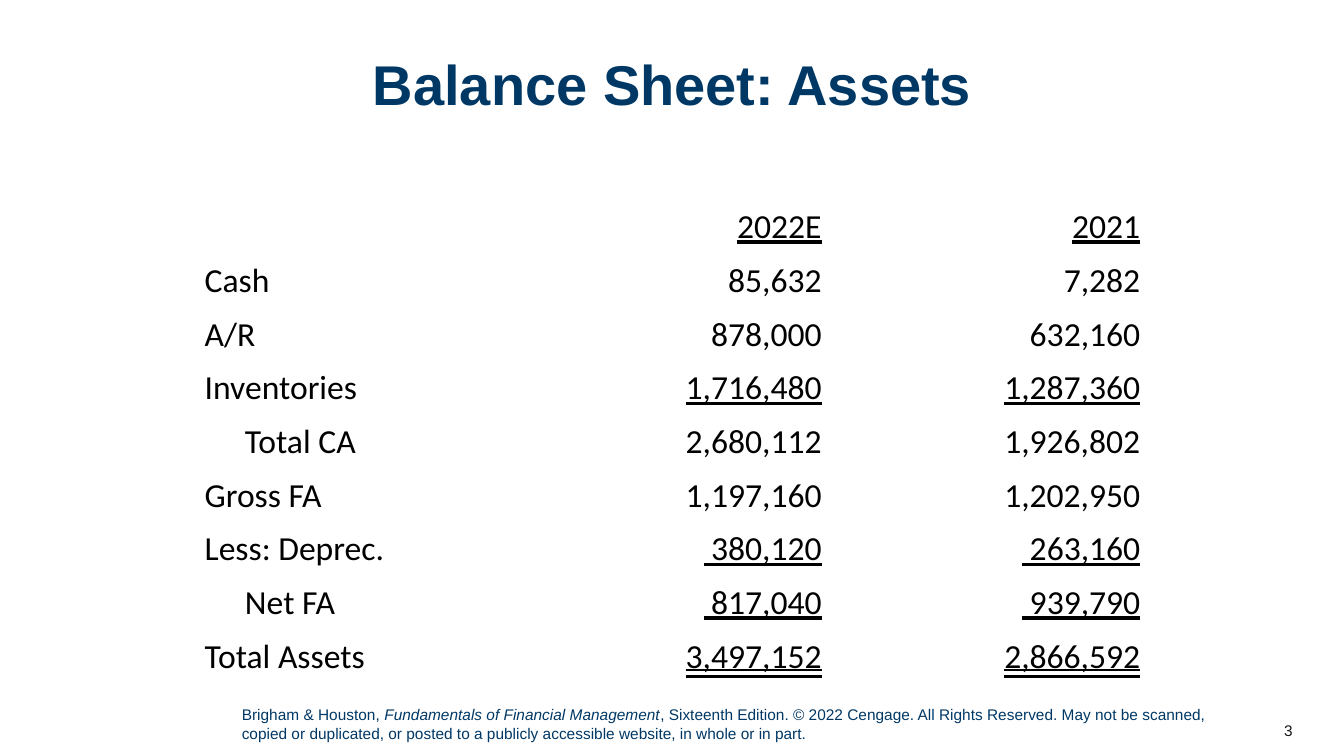
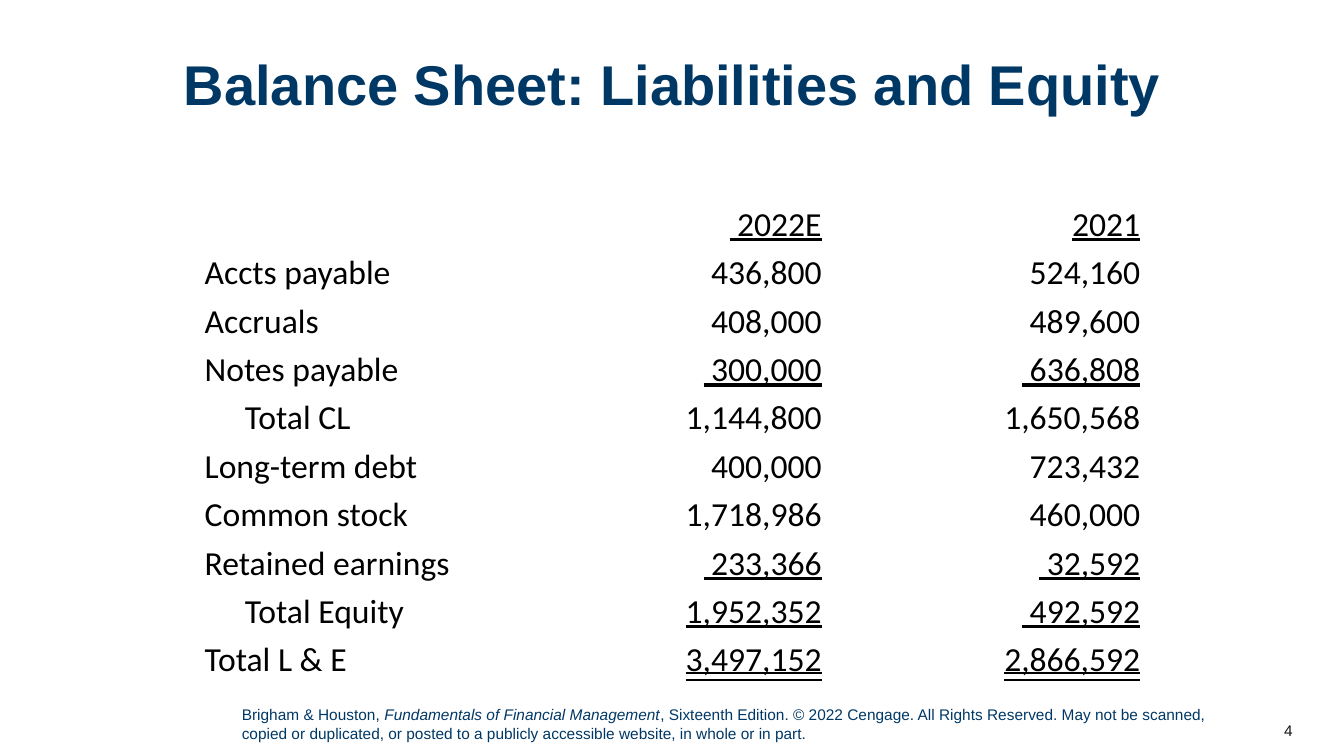
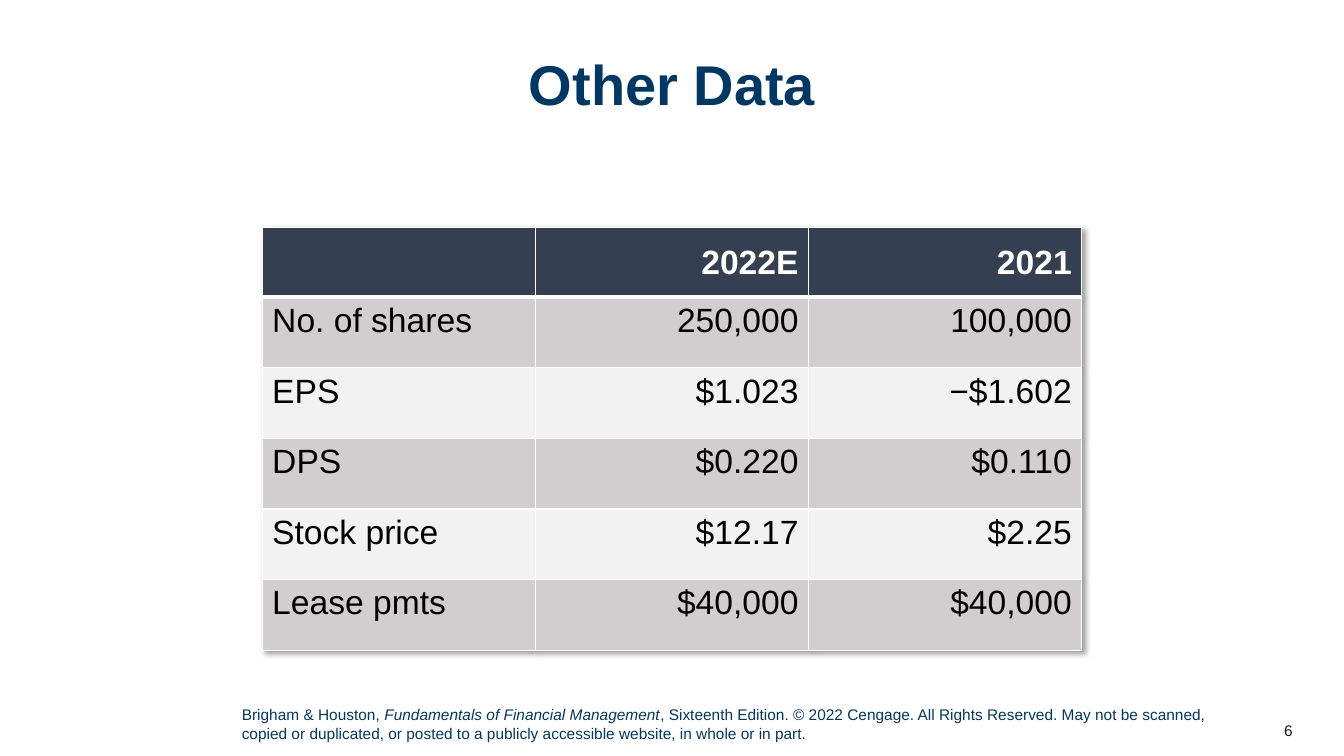
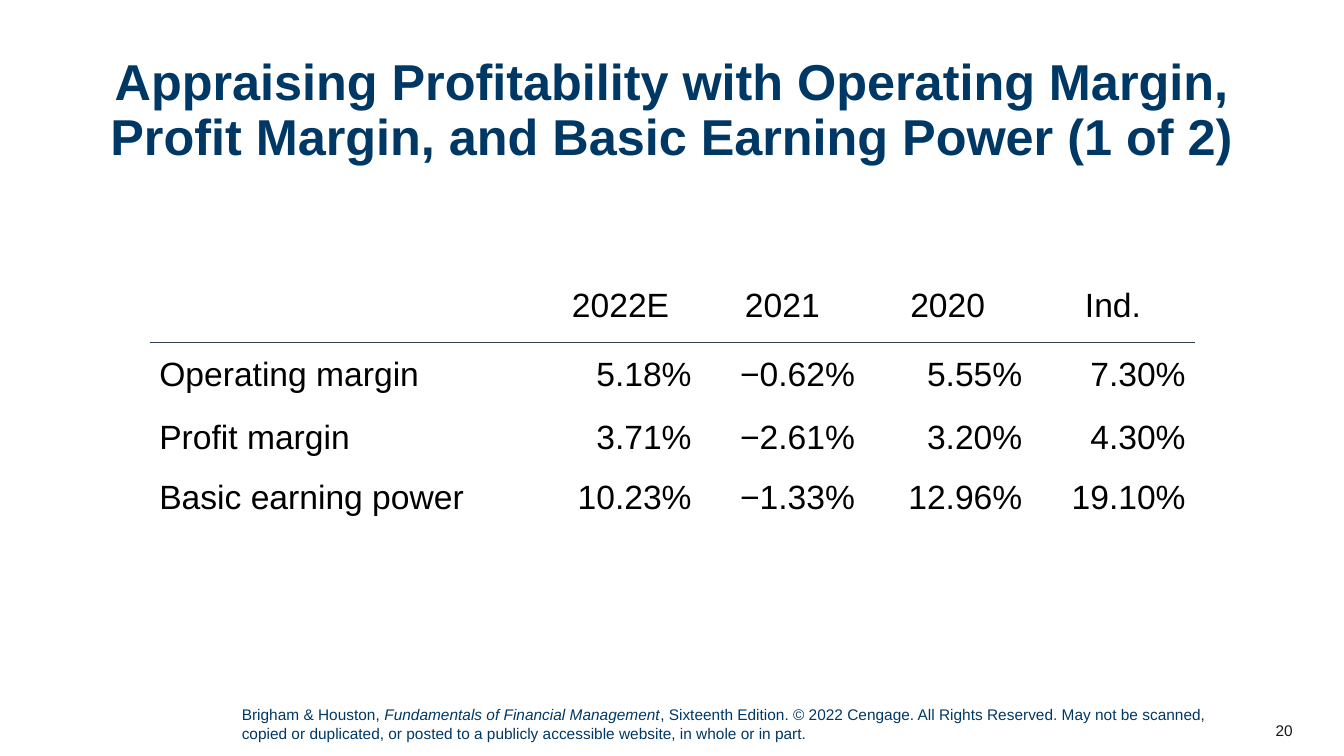
from lxml import etree
from pptx import Presentation
from pptx.dml.color import RGBColor
from pptx.enum.text import MSO_ANCHOR, MSO_UNDERLINE, PP_ALIGN
from pptx.oxml import parse_xml
from pptx.oxml.ns import qn
from pptx.util import Inches, Pt

LEFT, CENTER, RIGHT = PP_ALIGN.LEFT, PP_ALIGN.CENTER, PP_ALIGN.RIGHT
TOP, MIDDLE = MSO_ANCHOR.TOP, MSO_ANCHOR.MIDDLE
SINGLE, DOUBLE = MSO_UNDERLINE.SINGLE_LINE, MSO_UNDERLINE.DOUBLE_LINE

NAVY = RGBColor(0x00, 0x38, 0x65)
SLATE = RGBColor(0x34, 0x3F, 0x52)
INK = RGBColor(0x18, 0x17, 0x17)
BLACK = RGBColor(0x00, 0x00, 0x00)
WHITE = RGBColor(0xFF, 0xFF, 0xFF)
BAND_DARK = RGBColor(0xD0, 0xCE, 0xCE)
BAND_LIGHT = RGBColor(0xF2, 0xF2, 0xF2)

PLAIN_TABLE_STYLE = "{2D5ABB26-0587-4C30-8999-92F81FD0307C}"
TABLE_SHADOW = (
    '<a:effectLst xmlns:a="http://schemas.openxmlformats.org/drawingml/2006/main">'
    '<a:outerShdw blurRad="50800" dist="38100" dir="2700000" algn="tl" rotWithShape="0">'
    '<a:prstClr val="black"><a:alpha val="40000"/></a:prstClr>'
    "</a:outerShdw></a:effectLst>"
)

# Each citation part: text, italic
CITATION = [
    ("Brigham & Houston, ", False),
    ("Fundamentals of Financial Management", True),
    (", Sixteenth Edition. © 2022 Cengage. All Rights Reserved. May not be scanned, "
     "copied or duplicated, or posted to a publicly accessible website, in whole or in part.", False),
]

# Each statement row: underline, indented label, cells
ASSETS = [
    (SINGLE, False, ("", "2022E", "2021")),
    (None, False, ("Cash", "85,632", "7,282")),
    (None, False, ("A/R", "878,000", "632,160")),
    (SINGLE, False, ("Inventories", "1,716,480", "1,287,360")),
    (None, True, ("Total CA", "2,680,112", "1,926,802")),
    (None, False, ("Gross FA", "1,197,160", "1,202,950")),
    (SINGLE, False, ("Less: Deprec.", " 380,120", " 263,160")),
    (SINGLE, True, ("Net FA", " 817,040", " 939,790")),
    (DOUBLE, False, ("Total Assets", "3,497,152", "2,866,592")),
]
LIABILITIES = [
    (SINGLE, False, ("", " 2022E", "2021")),
    (None, False, ("Accts payable", "436,800", "524,160")),
    (None, False, ("Accruals", "408,000", "489,600")),
    (SINGLE, False, ("Notes payable", " 300,000", " 636,808")),
    (None, True, ("Total CL", "1,144,800", "1,650,568")),
    (None, False, ("Long-term debt", "400,000", "723,432")),
    (None, False, ("Common stock", "1,718,986", "460,000")),
    (SINGLE, False, ("Retained earnings", " 233,366", " 32,592")),
    (SINGLE, True, ("Total Equity", "1,952,352", " 492,592")),
    (DOUBLE, False, ("Total L & E", "3,497,152", "2,866,592")),
]
SHARE_DATA = [
    ("", "2022E", "2021"),
    ("No. of shares", "250,000", "100,000"),
    ("EPS", "$1.023", "−$1.602"),
    ("DPS", "$0.220", "$0.110"),
    ("Stock price", "$12.17", "$2.25"),
    ("Lease pmts", "$40,000", "$40,000"),
]
MARGINS = [
    ("", "2022E", "2021", "2020", "Ind."),
    ("Operating margin", "5.18%", "−0.62%", "5.55%", "7.30%"),
    ("Profit margin", "3.71%", "−2.61%", "3.20%", "4.30%"),
    ("Basic earning power", "10.23%", "−1.33%", "12.96%", "19.10%"),
]


def set_font(paragraph, size, color, name="Arial", bold=False):
    font = paragraph.font
    font.name, font.size, font.bold = name, Pt(size), bold
    font.color.rgb = color


def add_text(slide, box, parts, size, color, align=LEFT, anchor=TOP, bold=False):
    frame = slide.shapes.add_textbox(*map(Inches, box)).text_frame
    frame.word_wrap = True
    frame.vertical_anchor = anchor
    paragraph = frame.paragraphs[0]
    paragraph.alignment = align
    set_font(paragraph, size, color, bold=bold)
    for text, italic in parts:
        run = paragraph.add_run()
        run.text = text
        if italic:
            run.font.italic = True
    return paragraph


def add_page(prs, title, number, title_size=40):
    """Blank slide with the shared title, citation and page number."""
    slide = prs.slides.add_slide(prs.slide_layouts[6])
    add_text(slide, (12.12, 7.05, 0.8, 0.4), [(str(number), False)], 11, INK, RIGHT, MIDDLE)
    add_text(slide, (2.3, 6.95, 9.8, 0.47), CITATION, 11, NAVY)
    heading = add_text(slide, (0.52, 0.52, 12.29, 1.33), [(title, False)],
                       title_size, NAVY, CENTER, bold=True)
    heading.line_spacing = 0.9
    return slide


def add_grid(slide, left, top, widths, heights):
    table = slide.shapes.add_table(
        len(heights), len(widths), Inches(left), Inches(top),
        Inches(sum(widths)), Inches(sum(heights))).table
    table.first_row = table.horz_banding = False
    table._tbl.tblPr.find(qn("a:tableStyleId")).text = PLAIN_TABLE_STYLE
    for column, width in zip(table.columns, widths):
        column.width = Inches(width)
    for row, height in zip(table.rows, heights):
        row.height = Inches(height)
    return table


def set_borders(cell, color, widths):
    """Draw the sides named in widths (L, R, T, B to points) and clear the others."""
    properties = cell._tc.get_or_add_tcPr()
    for side in "LRTB":
        line = etree.SubElement(properties, qn(f"a:ln{side}"))
        if side in widths:
            line.set("w", str(Pt(widths[side])))
            fill = etree.SubElement(line, qn("a:solidFill"))
            etree.SubElement(fill, qn("a:srgbClr"), val=str(color))
        else:
            etree.SubElement(line, qn("a:noFill"))


def white_grid(row):
    """White cell borders, heavier between the heading and the body."""
    return {"L": 1, "R": 1, "T": 3 if row == 1 else 1, "B": 3 if row == 0 else 1}


def fill_cell(cell, text, align, color=BLACK, name="Arial", bold=False, anchor=TOP, fill=None):
    cell.vertical_anchor = anchor
    if fill is None:
        cell.fill.background()
    else:
        cell.fill.solid()
        cell.fill.fore_color.rgb = fill
    cell.text = text
    paragraph = cell.text_frame.paragraphs[0]
    paragraph.alignment = align
    set_font(paragraph, 24, color, name, bold)
    return paragraph


def add_statement(slide, top, rows, padding):
    """Balance sheet columns with ruled-off figures."""
    table = add_grid(slide, 1.93, top, [3.16] * 3, [4.8 / len(rows)] * len(rows))
    for r, (underline, indented, texts) in enumerate(rows):
        for c, text in enumerate(texts):
            cell = table.cell(r, c)
            cell.margin_top = cell.margin_bottom = Inches(padding)
            set_borders(cell, WHITE, white_grid(r))
            paragraph = fill_cell(cell, text, RIGHT if c else LEFT, name="Calibri")
            if c and underline:
                paragraph.font.underline = underline
            if c == 0 and indented:
                paragraph._p.get_or_add_pPr().set("marL", str(Inches(0.4)))


def add_share_data(slide):
    """Banded table with a dark heading and a soft shadow."""
    table = add_grid(slide, 2.6, 2.26, [2.71] * 3, [0.69] + [0.7] * 5)
    table._tbl.tblPr.insert(0, parse_xml(TABLE_SHADOW))
    for r, texts in enumerate(SHARE_DATA):
        heading = r == 0
        band = SLATE if heading else BAND_DARK if r % 2 else BAND_LIGHT
        for c, text in enumerate(texts):
            cell = table.cell(r, c)
            set_borders(cell, WHITE, white_grid(r))
            fill_cell(cell, text, RIGHT if c else LEFT, WHITE if heading else BLACK,
                      bold=heading, anchor=MIDDLE if heading else TOP, fill=band)


def add_margins(slide):
    """Open table with one rule below the heading."""
    table = add_grid(slide, 1.49, 2.8, [3.87, 1.59, 1.62, 1.66, 1.62], [0.6, 0.64, 0.6, 0.6])
    for r, texts in enumerate(MARGINS):
        for c, text in enumerate(texts):
            cell = table.cell(r, c)
            cell.margin_left = cell.margin_right = Inches(0.09)
            if r < 2:
                set_borders(cell, SLATE, {"T" if r else "B": 1})
            align = LEFT if c == 0 else RIGHT if r else CENTER
            fill_cell(cell, text, align, anchor=MIDDLE if r else TOP)


def main():
    prs = Presentation()
    prs.slide_width, prs.slide_height = Inches(13.33), Inches(7.5)

    # Balance sheet
    add_statement(add_page(prs, "Balance Sheet: Assets", 3), 2, ASSETS, 0.05)
    add_statement(add_page(prs, "Balance Sheet: Liabilities and Equity", 4), 2.01, LIABILITIES, 0.02)

    # Share data
    add_share_data(add_page(prs, "Other Data", 6))

    # Profitability ratios
    add_margins(add_page(
        prs, "Appraising Profitability with Operating Margin, "
        "Profit Margin, and Basic Earning Power (1 of 2)", 20, title_size=36))

    prs.save("out.pptx")


if __name__ == "__main__":
    main()
